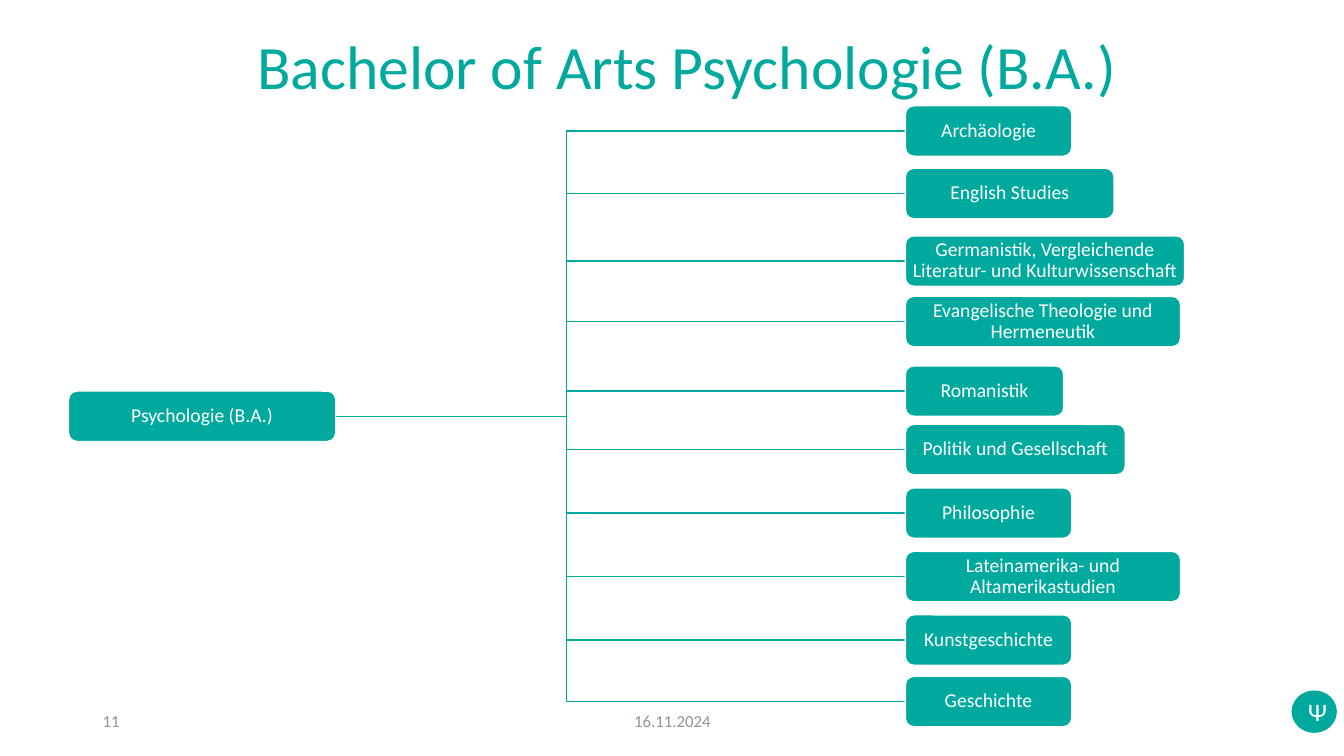
from dataclasses import dataclass
from pptx import Presentation
from pptx.dml.color import RGBColor
from pptx.enum.shapes import MSO_SHAPE
from pptx.enum.text import MSO_ANCHOR, MSO_AUTO_SIZE, PP_ALIGN
from pptx.util import Inches, Pt


@dataclass(frozen=True)
class Theme:
    teal: RGBColor = RGBColor(0x00, 0xA9, 0x9E)
    white: RGBColor = RGBColor(0xFF, 0xFF, 0xFF)
    gray: RGBColor = RGBColor(0x94, 0x93, 0x87)
    face: str = "Calibri"
    head: int = 44
    badge: int = 18
    body: int = 14
    foot: int = 12


LOOK = Theme()

# Tree geometry in inches
ROOT = (0.68, 3.88, 2.65)
START, MID, TRUNK = 2.26, 4.13, 5.62
LEFT, HIGH = 8.98, 0.5

PILL = MSO_SHAPE.FLOWCHART_ALTERNATE_PROCESS
ROUND = MSO_SHAPE.ROUNDED_RECTANGLE

# Subject, top, width, shape
SUBJECTS = [
    ("Archäologie", 1.05, 1.65, ROUND),
    ("English Studies", 1.67, 2.07, PILL),
    ("Germanistik, Vergleichende Literatur- und Kulturwissenschaft",
     2.34, 2.77, PILL),
    ("Evangelische Theologie und Hermeneutik", 2.94, 2.73, PILL),
    ("Romanistik", 3.63, 1.57, PILL),
    ("Politik und Gesellschaft", 4.21, 2.18, PILL),
    ("Philosophie", 4.84, 1.65, PILL),
    ("Lateinamerika- und Altamerikastudien", 5.47, 2.73, PILL),
    ("Kunstgeschichte", 6.1, 1.65, PILL),
    ("Geschichte", 6.71, 1.65, PILL),
]


def apply(target, **values):
    for name, value in values.items():
        setattr(target, name, value)


def write(shape, text, size, color, align=PP_ALIGN.CENTER, space=1.0,
          anchor=MSO_ANCHOR.MIDDLE, inset=None):
    frame = shape.text_frame
    apply(frame, word_wrap=True, auto_size=MSO_AUTO_SIZE.NONE,
          vertical_anchor=anchor)
    if inset is not None:
        gap = Inches(inset)
        apply(frame, margin_left=gap, margin_right=gap,
              margin_top=gap, margin_bottom=gap)
    para = frame.paragraphs[0]
    apply(para, alignment=align, line_spacing=space)
    run = para.add_run()
    run.text = text
    apply(run.font, name=LOOK.face, size=Pt(size))
    run.font.color.rgb = color


def add_title(slide, text):
    title = slide.shapes.title
    apply(title, left=Inches(2.45), top=Inches(0.31),
          width=Inches(10.09), height=Inches(1.45))
    write(title, text, LOOK.head, LOOK.teal, PP_ALIGN.LEFT, 0.9,
          MSO_ANCHOR.TOP)


def add_note(slide, text, left, width, align):
    box = slide.shapes.add_textbox(
        Inches(left), Inches(6.95), Inches(width), Inches(0.4))
    write(box, text, LOOK.foot, LOOK.gray, align)


def add_badge(slide, text):
    badge = slide.shapes.add_shape(
        MSO_SHAPE.OVAL, Inches(12.81), Inches(6.85),
        Inches(0.45), Inches(0.42))
    badge.shadow.inherit = False
    badge.fill.solid()
    badge.fill.fore_color.rgb = LOOK.teal
    badge.line.fill.background()
    write(badge, text, LOOK.badge, LOOK.white)


def add_branch(slide, end):
    points = [(START, MID), (TRUNK, MID), (TRUNK, end), (LEFT, end)]
    spots = [(Inches(x), Inches(y)) for x, y in points]
    pen = slide.shapes.build_freeform(*spots[0])
    pen.add_line_segments(spots[1:], close=False)
    branch = pen.convert_to_shape()
    branch.shadow.inherit = False
    branch.fill.background()
    branch.line.color.rgb = LOOK.teal
    branch.line.width = Pt(1)


def add_node(slide, text, left, top, width, kind=PILL):
    node = slide.shapes.add_shape(
        kind, Inches(left), Inches(top), Inches(width), Inches(HIGH))
    node.shadow.inherit = False
    node.fill.solid()
    node.fill.fore_color.rgb = LOOK.teal
    node.line.color.rgb = LOOK.white
    node.line.width = Pt(1)
    write(node, text, LOOK.body, LOOK.white, space=0.9, inset=0.03)


def main():
    deck = Presentation()
    apply(deck, slide_width=Inches(13.33), slide_height=Inches(7.5))
    slide = deck.slides.add_slide(deck.slide_layouts[5])

    # Title, badge and footer
    add_badge(slide, "Ψ")
    add_title(slide, "Bachelor of Arts Psychologie (B.A.)")
    add_note(slide, "16.11.2024", 5.17, 3, PP_ALIGN.CENTER)
    add_note(slide, "11", 0.92, 0.91, PP_ALIGN.LEFT)

    # Branches lie behind the nodes
    for _, top, _, _ in SUBJECTS:
        add_branch(slide, top + HIGH / 2)

    # Root and subjects
    add_node(slide, "Psychologie (B.A.)", *ROOT)
    for text, top, width, kind in SUBJECTS:
        add_node(slide, text, LEFT, top, width, kind)

    deck.save("out.pptx")


if __name__ == "__main__":
    main()
